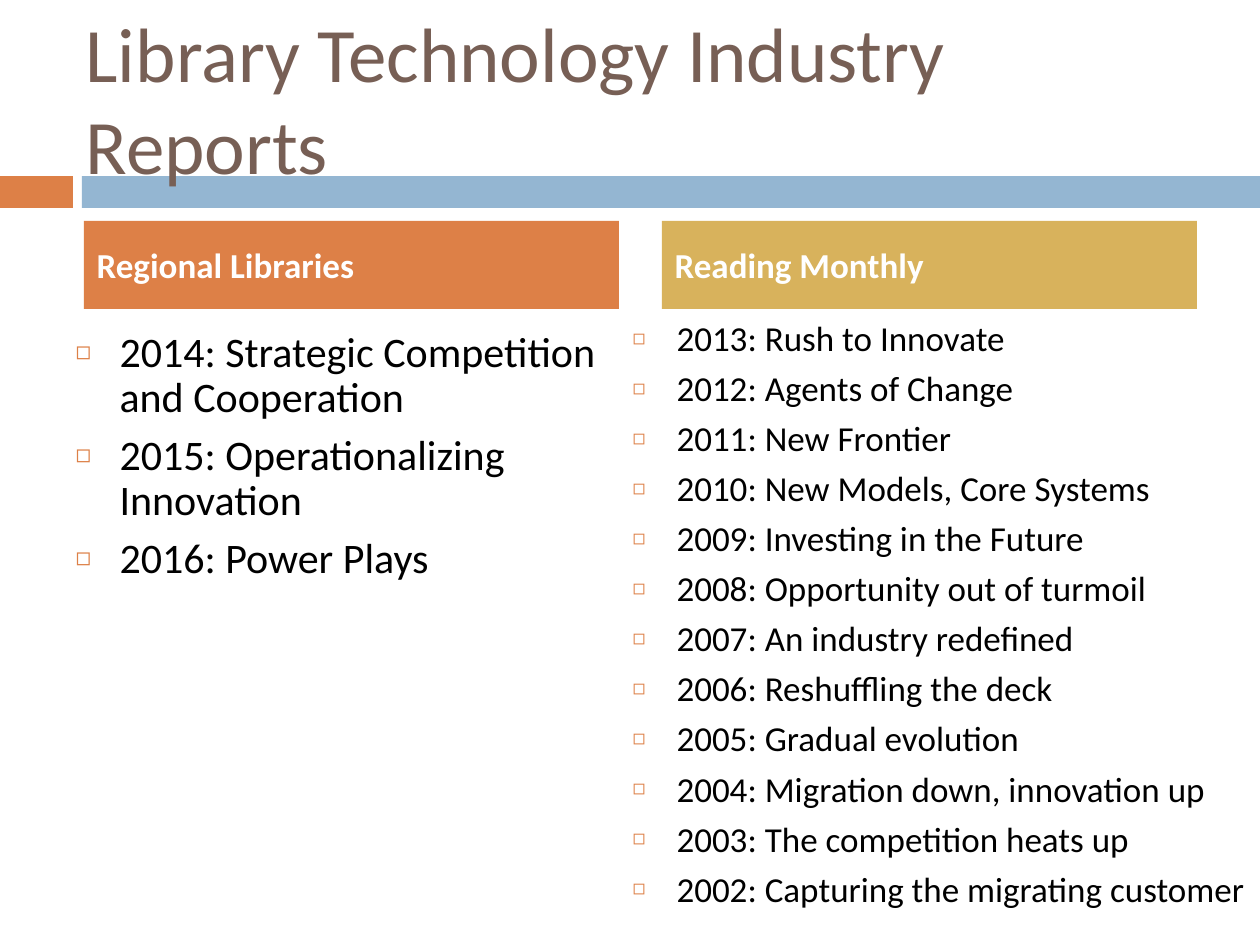
from dataclasses import dataclass

from lxml.etree import SubElement
from pptx import Presentation
from pptx.dml.color import RGBColor
from pptx.enum.shapes import MSO_SHAPE as Preset
from pptx.enum.text import MSO_ANCHOR as Anchor, MSO_AUTO_SIZE as AutoSize, PP_ALIGN as Align
from pptx.oxml.ns import qn
from pptx.util import Pt

EMU_PER_PX = 914400 / 126
COMPARISON_LAYOUT = 4


@dataclass(frozen=True)
class Theme:
    font: str = "Calibri"
    heading: str = "775F55"
    text: str = "000000"
    light: str = "FFFFFF"
    orange: str = "DD8047"
    blue: str = "94B6D2"
    gold: str = "D8B25C"
    title_size: int = 44
    large_size: int = 24
    small_size: int = 20


@dataclass(frozen=True)
class Area:
    left: int
    top: int
    width: int
    height: int


@dataclass(frozen=True)
class Column:
    heading: str
    heading_area: Area
    fill: str
    items: tuple[str, ...]
    list_area: Area
    size: int


THEME = Theme()

BANDS = (
    (Area(0, 176, 73, 32), THEME.orange),
    (Area(82, 176, 1178, 32), THEME.blue),
)

COLUMNS = (
    Column(
        "Regional Libraries", Area(84, 221, 535, 88), THEME.orange,
        (
            "2014: Strategic Competition and Cooperation",
            "2015: Operationalizing Innovation",
            "2016: Power Plays",
        ),
        Area(63, 325, 557, 494), THEME.large_size,
    ),
    Column(
        "Reading Monthly", Area(662, 221, 535, 88), THEME.gold,
        (
            "2013: Rush to Innovate",
            "2012: Agents of Change",
            "2011: New Frontier",
            "2010: New Models, Core Systems",
            "2009: Investing in the Future",
            "2008: Opportunity out of turmoil",
            "2007: An industry redefined",
            "2006: Reshuffling the deck",
            "2005: Gradual evolution",
            "2004: Migration down, innovation up",
            "2003: The competition heats up",
            "2002: Capturing the migrating customer",
        ),
        Area(620, 315, 640, 599), THEME.small_size,
    ),
)


def px(length: int) -> int:
    return round(length * EMU_PER_PX)


def place(box, area: Area) -> None:
    box.left, box.top = px(area.left), px(area.top)
    box.width, box.height = px(area.width), px(area.height)


def paint(box, color: str) -> None:
    box.fill.solid()
    box.fill.fore_color.rgb = RGBColor.from_string(color)


def add_bullet(para) -> None:
    properties = para._p.get_or_add_pPr()
    properties.set("marL", str(px(44)))
    properties.set("indent", str(-px(44)))
    color = SubElement(properties, qn("a:buClr"))
    SubElement(color, qn("a:srgbClr"), val=THEME.orange)
    SubElement(properties, qn("a:buSzPct"), val="60000")
    SubElement(properties, qn("a:buChar"), char="◻")


def write(box, *lines: str, size: int, color: str, bold: bool = False,
          anchor: Anchor = Anchor.TOP, before: int = 0,
          spacing: float = 1.0, bullet: bool = False) -> None:
    frame = box.text_frame
    frame.word_wrap = True
    frame.auto_size = AutoSize.NONE
    frame.vertical_anchor = anchor
    for index, line in enumerate(lines):
        para = frame.add_paragraph() if index else frame.paragraphs[0]
        para.alignment = Align.LEFT
        para.line_spacing = spacing
        para.space_before = Pt(before)
        if bullet:
            add_bullet(para)
        span = para.add_run()
        span.text = line
        span.font.name = THEME.font
        span.font.size = Pt(size)
        span.font.bold = bold
        span.font.color.rgb = RGBColor.from_string(color)


def draw_band(page, area: Area, color: str, layer: int) -> None:
    box = page.shapes.add_shape(Preset.RECTANGLE, 0, 0, 0, 0)
    place(box, area)
    box.shadow.inherit = False
    paint(box, color)
    box.line.fill.background()
    page.shapes._spTree.insert(2 + layer, box._element)


def draw_column(column: Column, heading_box, list_box) -> None:
    place(heading_box, column.heading_area)
    paint(heading_box, column.fill)
    write(heading_box, column.heading, size=THEME.small_size, color=THEME.light,
          bold=True, anchor=Anchor.MIDDLE, before=7)
    place(list_box, column.list_area)
    write(list_box, *column.items, size=column.size, color=THEME.text,
          before=7, spacing=0.9, bullet=True)


def main() -> None:
    deck = Presentation()
    deck.slide_width, deck.slide_height = px(1260), px(945)
    page = deck.slides.add_slide(deck.slide_layouts[COMPARISON_LAYOUT])
    for layer, (area, color) in enumerate(BANDS):
        draw_band(page, area, color, layer)

    title, *boxes = page.placeholders
    place(title, Area(73, 38, 1124, 120))
    write(title, "Library Technology Industry Reports", size=THEME.title_size,
          color=THEME.heading, anchor=Anchor.MIDDLE)
    for column, heading_box, list_box in zip(COLUMNS, boxes[::2], boxes[1::2]):
        draw_column(column, heading_box, list_box)
    deck.save("out.pptx")


if __name__ == "__main__":
    main()
